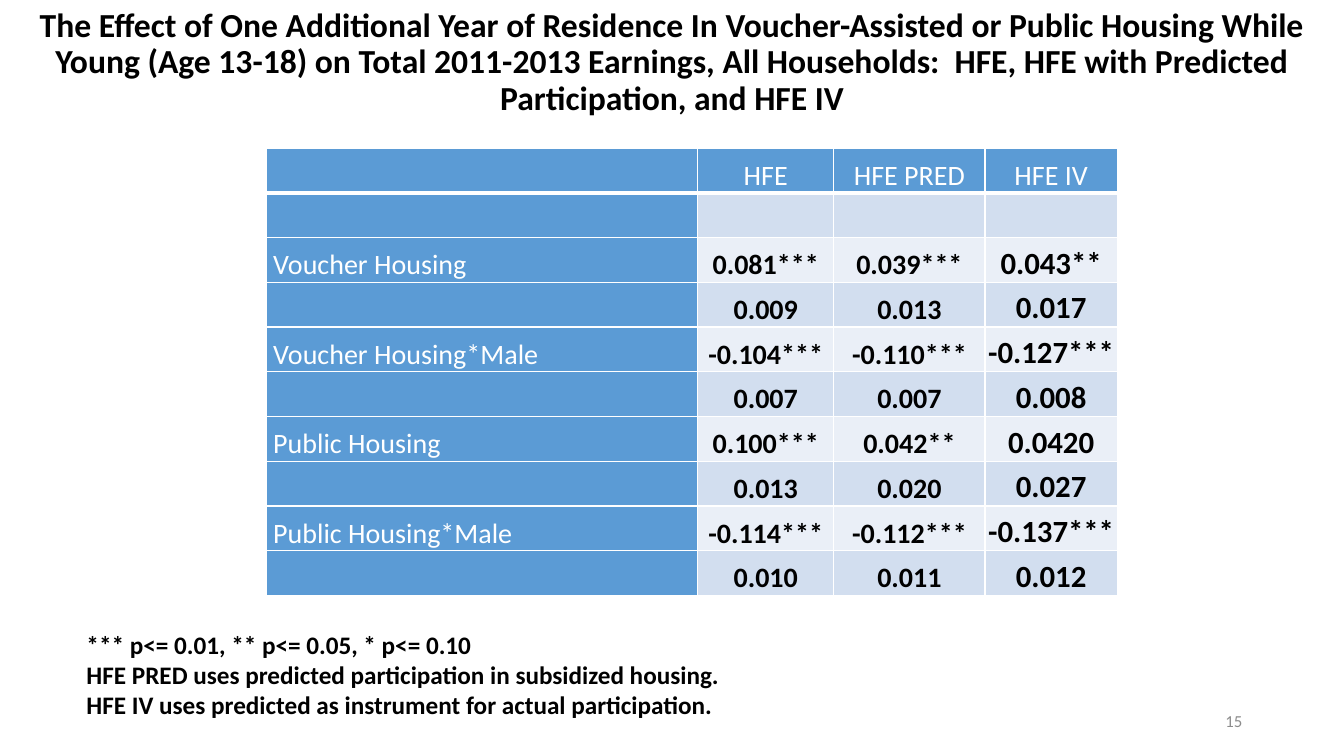
"""Build the slide on housing assistance while young and later earnings."""
from pptx import Presentation
from pptx.dml.color import RGBColor
from pptx.enum.text import MSO_ANCHOR, PP_ALIGN
from pptx.oxml import parse_xml
from pptx.oxml.ns import nsdecls
from pptx.util import Inches, Pt

LEFT, CENTER, RIGHT = PP_ALIGN.LEFT, PP_ALIGN.CENTER, PP_ALIGN.RIGHT
MIDDLE, BOTTOM = MSO_ANCHOR.MIDDLE, MSO_ANCHOR.BOTTOM
BLACK, WHITE, GRAY = "000000", "FFFFFF", "8C8C8C"
BLUE, BANDS = "5B9BD5", ("EAEFF7", "D2DEEF")

TITLE = ("The Effect of One Additional Year of Residence In Voucher-Assisted or "
         "Public Housing While Young (Age 13-18) on Total 2011-2013 Earnings, "
         "All Households:  HFE, HFE with Predicted Participation, and HFE IV")
NOTES = ["*** p<= 0.01, ** p<= 0.05, * p<= 0.10",
         "HFE PRED uses predicted participation in subsidized housing.",
         "HFE IV uses predicted as instrument for actual participation."]
ROWS = [
    ["", "HFE", "HFE PRED", "HFE IV"],
    ["", "", "", ""],
    ["Voucher Housing", "0.081***", "0.039***", "0.043**"],
    ["", "0.009", "0.013", "0.017"],
    ["Voucher Housing*Male", "-0.104***", "-0.110***", "-0.127***"],
    ["", "0.007", "0.007", "0.008"],
    ["Public Housing", "0.100***", "0.042**", "0.0420"],
    ["", "0.013", "0.020", "0.027"],
    ["Public Housing*Male", "-0.114***", "-0.112***", "-0.137***"],
    ["", "0.010", "0.011", "0.012"],
]
COL_WIDTHS = [4.28, 1.35, 1.5, 1.31]
ROW_HEIGHT = 4.44 / len(ROWS)


def rgb(color):
    return RGBColor.from_string(color)


def write(p, text, size, color, bold, align):
    p.text = text
    p.alignment = align
    p.font.name = "Calibri"
    p.font.size = Pt(size)
    p.font.bold = bold
    p.font.color.rgb = rgb(color)


prs = Presentation()
prs.slide_width, prs.slide_height = Inches(13.33), Inches(7.5)
s = prs.slides.add_slide(prs.slide_layouts[5])

title = s.shapes.title
title.left, title.top = Inches(0), Inches(0)
title.width, title.height = Inches(13.33), Inches(1.25)
title.text_frame.vertical_anchor = MIDDLE
p = title.text_frame.paragraphs[0]
write(p, TITLE, 24, BLACK, True, CENTER)
p.line_spacing = 0.9

number = s.shapes.add_textbox(Inches(9.42), Inches(6.95), Inches(3), Inches(0.4))
number.text_frame.word_wrap = True
number.text_frame.vertical_anchor = MIDDLE
write(number.text_frame.paragraphs[0], "15", 12, GRAY, False, RIGHT)

notes = s.shapes.add_textbox(Inches(0.76), Inches(6.19), Inches(6.64), Inches(1.01))
tf = notes.text_frame
tf.word_wrap = False
for i, line in enumerate(NOTES):
    p = tf.add_paragraph() if i else tf.paragraphs[0]
    write(p, line, 18, BLACK, True, LEFT)

table = s.shapes.add_table(len(ROWS), len(COL_WIDTHS), Inches(2.64), Inches(1.47),
                           Inches(sum(COL_WIDTHS)), Inches(4.44)).table
table.first_row = table.horz_banding = False
for column, width in zip(table.columns, COL_WIDTHS):
    column.width = Inches(width)

for r, values in enumerate(ROWS):
    table.rows[r].height = Inches(ROW_HEIGHT)
    for c, value in enumerate(values):
        cell = table.cell(r, c)
        label = r == 0 or c == 0
        wide = c == 3 and r > 0
        cell.vertical_anchor = BOTTOM
        cell.margin_left = cell.margin_right = Inches(0 if wide else 0.07)
        cell.margin_top = cell.margin_bottom = Inches(0)
        write(cell.text_frame.paragraphs[0], value, 22 if wide else 20,
              WHITE if label else BLACK, not label, CENTER if c else LEFT)
        for side in "LRTB" if r == 0 else "LRB":
            points = 3 if r == 0 and side == "B" else 1
            cell._tc.get_or_add_tcPr().append(parse_xml(
                f'<a:ln{side} {nsdecls("a")} w="{Pt(points)}"><a:solidFill>'
                f'<a:srgbClr val="{WHITE}"/></a:solidFill></a:ln{side}>'))
        cell.fill.solid()
        cell.fill.fore_color.rgb = rgb(BLUE if label else BANDS[r % 2])

prs.save("out.pptx")
